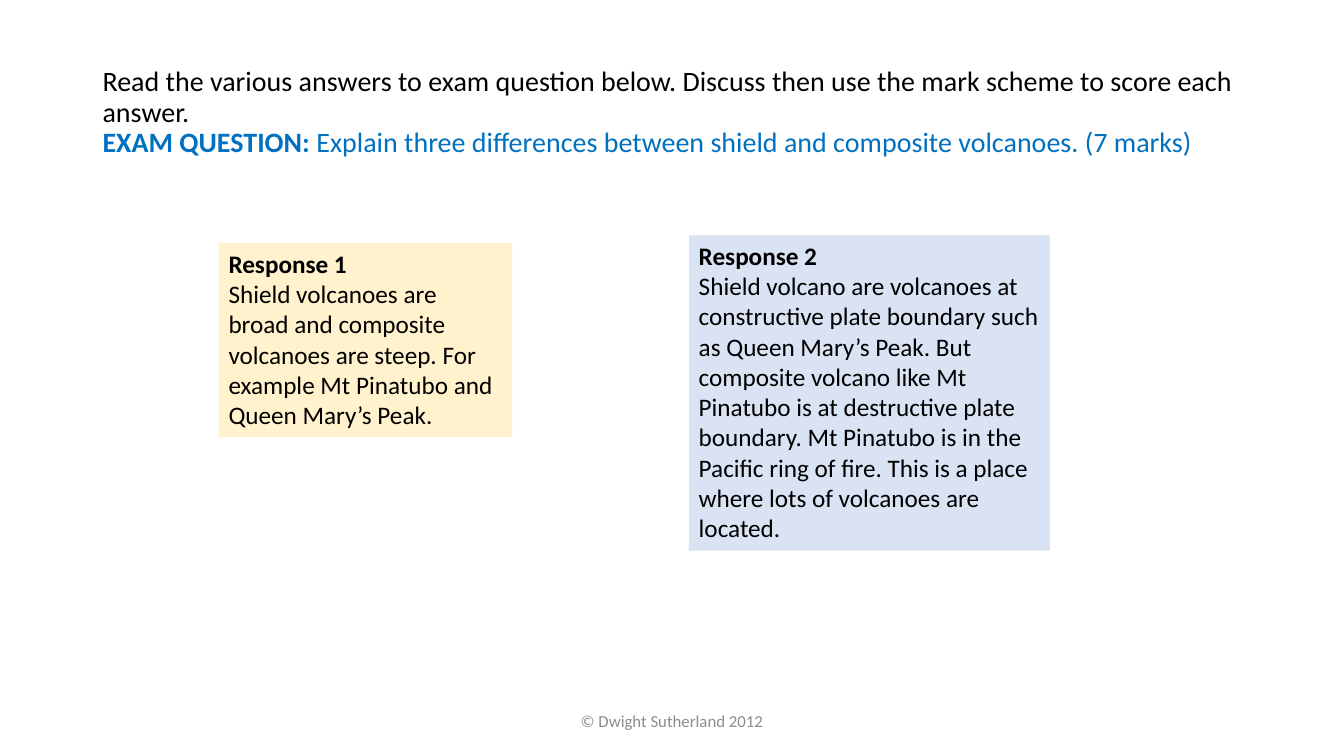
from dataclasses import dataclass
from typing import Any

import pptx
import pptx.dml.color
import pptx.enum.text
import pptx.util
from pptx.util import Cm

ALIGN = pptx.enum.text.PP_ALIGN
ANCHOR = pptx.enum.text.MSO_ANCHOR
AUTO_SIZE = pptx.enum.text.MSO_AUTO_SIZE
BLACK, BLUE, GREY = "000000", "0070C0", "8C8C8C"


@dataclass
class Response:
    heading: str
    answer: str
    left: float
    top: float
    width: float
    height: float
    fill: str


RESPONSES = [
    Response(
        "Response 1",
        "Shield volcanoes are broad and composite volcanoes are steep. "
        "For example Mt Pinatubo and Queen Mary’s Peak.",
        5.51, 6.13, 7.4, 4.88, "FFF2CC",
    ),
    Response(
        "Response 2",
        "Shield volcano are volcanoes at constructive plate boundary such as "
        "Queen Mary’s Peak. But composite volcano like Mt Pinatubo is at "
        "destructive plate boundary. Mt Pinatubo is in the Pacific ring of fire. "
        "This is a place where lots of volcanoes are located.",
        17.36, 5.93, 9.1, 7.95, "DAE3F3",
    ),
]


def colour(value: str) -> Any:
    return pptx.dml.color.RGBColor.from_string(value)


def apply_format(target: Any, values: dict[str, Any]) -> None:
    for name, value in values.items():
        setattr(target, name, value)


def add_span(para: Any, text: str, size: int, shade: str = BLACK, bold: bool = False) -> None:
    span = para.add_run()
    span.text = text
    apply_format(span.font, {"name": "Calibri", "size": pptx.util.Pt(size), "bold": bold})
    span.font.color.rgb = colour(shade)


def write_title(page: Any) -> None:
    title = page.shapes.title
    apply_format(title, {"left": Cm(2.33), "top": Cm(1.01),
                         "width": Cm(29.21), "height": Cm(3.68)})
    apply_format(title.text_frame, {"vertical_anchor": ANCHOR.MIDDLE, "word_wrap": True,
                                    "auto_size": AUTO_SIZE.NONE})
    para = title.text_frame.paragraphs[0]
    apply_format(para, {"alignment": ALIGN.LEFT, "line_spacing": 0.9})
    add_span(para, "Read the various answers to exam question below. Discuss then use "
                   "the mark scheme to score each answer. ", 20)
    para.add_line_break()
    add_span(para, "EXAM QUESTION:", 20, BLUE, bold=True)
    add_span(para, " Explain three differences between shield and composite volcanoes. "
                   "(7 marks)", 20, BLUE)


def add_response(page: Any, response: Response) -> None:
    box = page.shapes.add_textbox(Cm(response.left), Cm(response.top),
                                  Cm(response.width), Cm(response.height))
    box.fill.solid()
    box.fill.fore_color.rgb = colour(response.fill)
    apply_format(box.text_frame, {"word_wrap": True,
                                  "auto_size": AUTO_SIZE.SHAPE_TO_FIT_TEXT})
    add_span(box.text_frame.paragraphs[0], response.heading, 18, bold=True)
    add_span(box.text_frame.add_paragraph(), response.answer, 18)


def add_footer(page: Any) -> None:
    box = page.shapes.add_textbox(Cm(11.22), Cm(17.65), Cm(11.43), Cm(1.01))
    apply_format(box.text_frame, {"word_wrap": True, "vertical_anchor": ANCHOR.MIDDLE})
    para = box.text_frame.paragraphs[0]
    para.alignment = ALIGN.CENTER
    add_span(para, "© Dwight Sutherland 2012", 12, GREY)


def main() -> None:
    deck = pptx.Presentation()
    apply_format(deck, {"slide_width": Cm(33.87), "slide_height": Cm(19.05)})
    page = deck.slides.add_slide(deck.slide_layouts.get_by_name("Title Only"))
    write_title(page)
    for response in RESPONSES:
        add_response(page, response)
    add_footer(page)
    deck.save("out.pptx")


if __name__ == "__main__":
    main()
